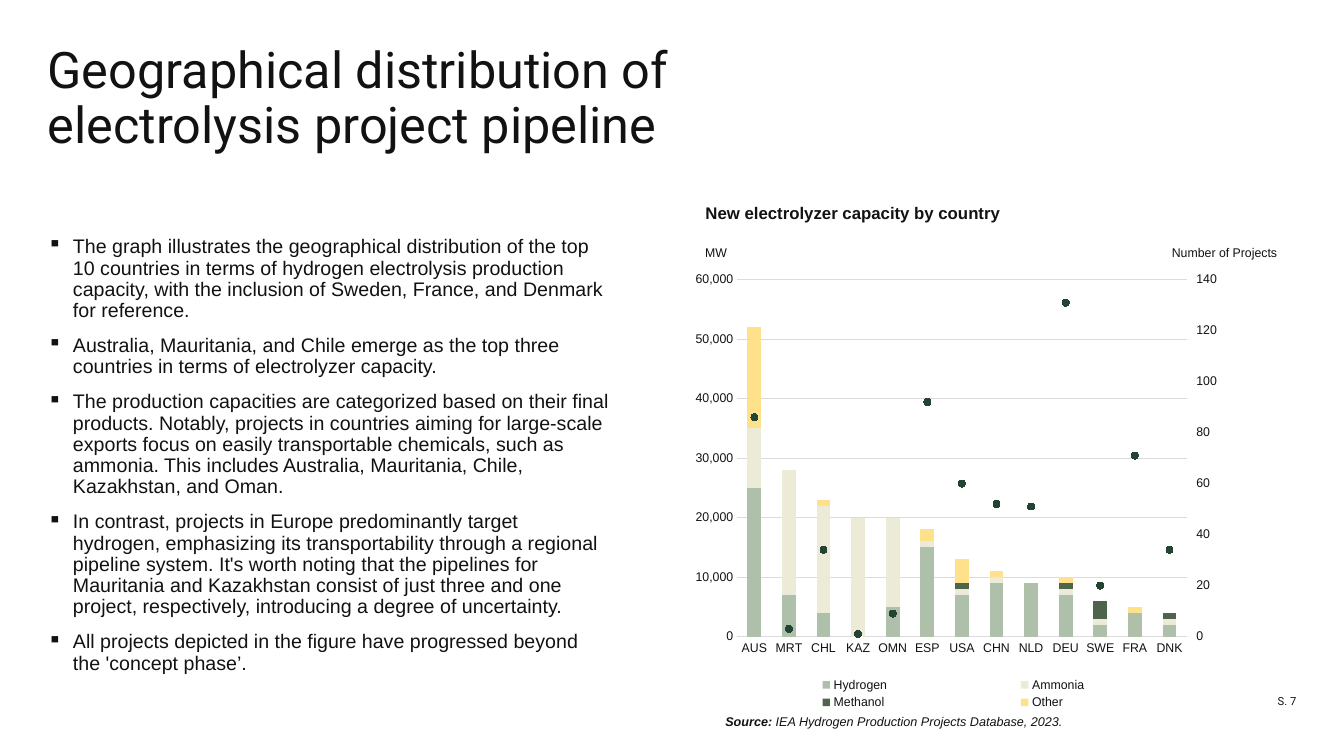
import copy
import pptx
import pptx.util
import pptx.oxml
import pptx.oxml.ns
import pptx.dml.color
import pptx.chart.axis
import pptx.chart.data
import pptx.enum.chart
import pptx.enum.text

Cm, Pt = pptx.util.Cm, pptx.util.Pt
RGB = pptx.dml.color.RGBColor
qn, nsdecls = pptx.oxml.ns.qn, pptx.oxml.ns.nsdecls
TICK = pptx.enum.chart.XL_TICK_MARK
ANCHOR = pptx.enum.text.MSO_ANCHOR

INK = RGB(0x12, 0x12, 0x12)
GRID = RGB(0xDB, 0xDB, 0xDB)
SAGE = RGB(0xAF, 0xC0, 0xAA)
CREAM = RGB(0xEB, 0xEB, 0xD7)
MOSS = RGB(0x4E, 0x64, 0x4B)
GOLD = RGB(0xFF, 0xE1, 0x8C)
PINE = RGB(0x23, 0x44, 0x32)

SMALL = {"name": "Arial", "size": Pt(9)}
HEAD = {"name": "Roboto", "size": Pt(36)}
BODY = {"name": "Arial", "size": Pt(14)}
PAGE = {"name": "Roboto", "size": Pt(8)}

POINTS = [
    "The graph illustrates the geographical distribution of the top 10 countries in terms of hydrogen "
    "electrolysis production capacity, with the inclusion of Sweden, France, and Denmark for reference.",
    "Australia, Mauritania, and Chile emerge as the top three countries in terms of electrolyzer capacity.",
    "The production capacities are categorized based on their final products. Notably, projects in countries "
    "aiming for large-scale exports focus on easily transportable chemicals, such as ammonia. This includes "
    "Australia, Mauritania, Chile, Kazakhstan, and Oman.",
    "In contrast, projects in Europe predominantly target hydrogen, emphasizing its transportability through "
    "a regional pipeline system. It's worth noting that the pipelines for Mauritania and Kazakhstan consist "
    "of just three and one project, respectively, introducing a degree of uncertainty.",
    "All projects depicted in the figure have progressed beyond the 'concept phase’.",
]
LANDS = "AUS MRT CHL KAZ OMN ESP USA CHN NLD DEU SWE FRA DNK".split()
# Capacity in thousands of MW
FUELS = [
    ("Hydrogen", SAGE, [25, 7, 4, None, 5, 15, 7, 9, 9, 7, 2, 4, 2]),
    ("Ammonia", CREAM, [10, 21, 18, 20, 15, 1, 1, 1, 0, 1, 1, None, 1]),
    ("Methanol", MOSS, [0, None, 0, None, None, 0, 1, 0, 0, 1, 3, 0, 1]),
    ("Other", GOLD, [17, 0, 1, 0, 0, 2, 4, 1, 0, 1, 0, 1, 0]),
]
COUNTS = [86, 3, 34, 1, 9, 92, 60, 52, 51, 131, 20, 71, 34]


def style(item, form):
    for key, val in form.items():
        setattr(item, key, val)


def ink(font, form):
    style(font, form)
    font.color.rgb = INK


def label(slide, box, runs, frame=None, para=None):
    """Add a one-paragraph text box; runs are (text, font format) pairs."""
    text = slide.shapes.add_textbox(*map(Cm, box)).text_frame
    style(text, {"word_wrap": True, **(frame or {})})
    line = text.paragraphs[0]
    style(line, para or {})
    for words, form in runs:
        run = line.add_run()
        run.text = words
        ink(run.font, form)
    return text


FLUSH = dict.fromkeys(["margin_left", "margin_top", "margin_right", "margin_bottom"], 0)


def add_list(slide, box):
    text = slide.shapes.add_textbox(*map(Cm, box)).text_frame
    style(text, {**FLUSH, "word_wrap": True})
    for num, words in enumerate(POINTS):
        line = text.add_paragraph() if num else text.paragraphs[0]
        style(line, {"line_spacing": 0.9, "space_before": Pt(10 if num else 0)})
        props = line._p.get_or_add_pPr()
        props.set("marL", str(Cm(0.64)))
        props.set("indent", str(-Cm(0.64)))
        props.append(pptx.oxml.parse_xml(f'<a:buChar {nsdecls("a")} char="▪"/>'))
        run = line.add_run()
        run.text = words
        ink(run.font, BODY)


def place(mark, inner=False, **dims):
    """Put a manual layout just before the given chart element."""
    home = mark.getparent()
    for old in home.findall(qn("c:layout")):
        home.remove(old)
    rows = '<c:layoutTarget val="inner"/>' if inner else ""
    rows += '<c:xMode val="edge"/><c:yMode val="edge"/>'
    rows += "".join(f'<c:{key} val="{val}"/>' for key, val in dims.items())
    mark.addprevious(pptx.oxml.parse_xml(
        f'<c:layout {nsdecls("c")}><c:manualLayout>{rows}</c:manualLayout></c:layout>'))


def name_axis(axis, words, x, y):
    text = axis.axis_title.text_frame
    text.text = words
    text._txBody.find(qn("a:bodyPr")).set("rot", "0")
    ink(text.paragraphs[0].runs[0].font, {**SMALL, "bold": False})
    place(axis.axis_title._element.find(qn("c:overlay")), x=x, y=y)


def add_right(chart):
    """Move the last series to markers on a second value axis."""
    plot = chart._chartSpace.chart.plotArea
    bars = plot.find(qn("c:barChart"))
    line = pptx.oxml.parse_xml(
        f'<c:lineChart {nsdecls("c")}><c:grouping val="standard"/><c:varyColors val="0"/>'
        '<c:marker val="1"/><c:axId val="501"/><c:axId val="502"/></c:lineChart>')
    dots = bars.findall(qn("c:ser"))[-1]
    for flip in dots.findall(qn("c:invertIfNegative")):
        dots.remove(flip)
    line.insert(2, dots)
    bars.addnext(line)
    last = plot.find(qn("c:valAx"))
    twins = []
    for tag, own, other in (("c:valAx", "502", "501"), ("c:catAx", "501", "502")):
        twin = copy.deepcopy(plot.find(qn(tag)))
        twin.find(qn("c:axId")).set("val", own)
        twin.find(qn("c:crossAx")).set("val", other)
        last.addnext(twin)
        last = twin
        twins.append(twin)
    twins[0].find(qn("c:axPos")).set("val", "r")
    twins[0].find(qn("c:crosses")).set("val", "max")
    pptx.chart.axis.CategoryAxis(twins[1]).visible = False
    right = pptx.chart.axis.ValueAxis(twins[0])
    style(right, {"has_major_gridlines": False, "maximum_scale": 140, "major_unit": 20,
                  "major_tick_mark": TICK.OUTSIDE})
    style(right.tick_labels, {"number_format": "General", "number_format_is_linked": False})
    name_axis(right, "Number of Projects", 0.83, 0.01)


def add_graph(slide, box):
    data = pptx.chart.data.CategoryChartData()
    data.categories = LANDS
    for name, _, vals in FUELS:
        data.add_series(name, [None if val is None else val * 1000 for val in vals])
    data.add_series("Number of Projects (right axis)", COUNTS)
    kind = pptx.enum.chart.XL_CHART_TYPE.COLUMN_STACKED
    chart = slide.shapes.add_chart(kind, *map(Cm, box), data).chart
    style(chart, {"has_title": False, "has_legend": True})
    ink(chart.font, {"name": "Roboto", "size": Pt(10)})

    # Axes
    cat, val = chart.category_axis, chart.value_axis
    for axis in (cat, val):
        style(axis, {"major_tick_mark": TICK.NONE, "minor_tick_mark": TICK.NONE})
        ink(axis.tick_labels.font, SMALL)
    style(val, {"minimum_scale": 0, "maximum_scale": 60000, "major_unit": 10000,
                "has_major_gridlines": True})
    style(val.tick_labels, {"number_format": "#,##0", "number_format_is_linked": False})
    for rule in (cat.format.line, val.major_gridlines.format.line):
        rule.color.rgb = GRID
        rule.width = Pt(0.75)
    val.format.line.fill.background()
    name_axis(val, "MW", 0.01, 0.01)

    # Series
    add_right(chart)
    bars, line = chart.plots
    style(bars, {"gap_width": 150, "overlap": 100, "vary_by_categories": False})
    for part, (_, tint, _) in zip(bars.series, FUELS):
        part.format.fill.solid()
        part.format.fill.fore_color.rgb = tint
    dots = line.series[0]
    dots.smooth = False
    dots.format.line.fill.background()
    style(dots.marker, {"style": pptx.enum.chart.XL_MARKER_STYLE.CIRCLE, "size": 5})
    dots.marker.format.fill.solid()
    dots.marker.format.fill.fore_color.rgb = PINE
    dots.marker.format.line.fill.background()

    # Legend and plot area
    key = chart.legend
    style(key, {"position": pptx.enum.chart.XL_LEGEND_POSITION.BOTTOM, "include_in_layout": False})
    ink(key.font, SMALL)
    place(key._element.find(qn("c:overlay")), x=0.19, y=0.92, w=0.52, h=0.08)
    place(bars._element, inner=True, x=0.07, y=0.09, w=0.79, h=0.75)


def add_panel(slide, box):
    """Chart with its heading above and its source below."""
    left, top, wide, high = box
    label(slide, (left, top - 0.99, 16.92, 0.76),
          [("New electrolyzer capacity by country", {**BODY, "size": Pt(12), "bold": True})])
    add_graph(slide, box)
    note = {**SMALL, "italic": True}
    label(slide, (left + 0.5, top + high - 0.1, 9.17, 0.63),
          [("Source:", {**note, "bold": True}),
           (" IEA Hydrogen Production Projects Database, 2023.", note)])


def main():
    deck = pptx.Presentation()
    style(deck, {"slide_width": Cm(33.87), "slide_height": Cm(19.05)})
    slide = deck.slides.add_slide(deck.slide_layouts[6])
    low = {**FLUSH, "vertical_anchor": ANCHOR.BOTTOM}
    label(slide, (1.2, 1.2, 17.91, 2.69),
          [("Geographical distribution of electrolysis project pipeline", HEAD)],
          low, {"line_spacing": 0.9})
    add_list(slide, (1.2, 5.97, 14.2, 8.43))
    add_panel(slide, (17.53, 5.97, 14.71, 11.99))
    label(slide, (30.05, 16.84, 2.62, 0.99), [("S. 7", PAGE)],
          low, {"alignment": pptx.enum.text.PP_ALIGN.RIGHT})
    deck.save("out.pptx")


if __name__ == "__main__":
    main()
